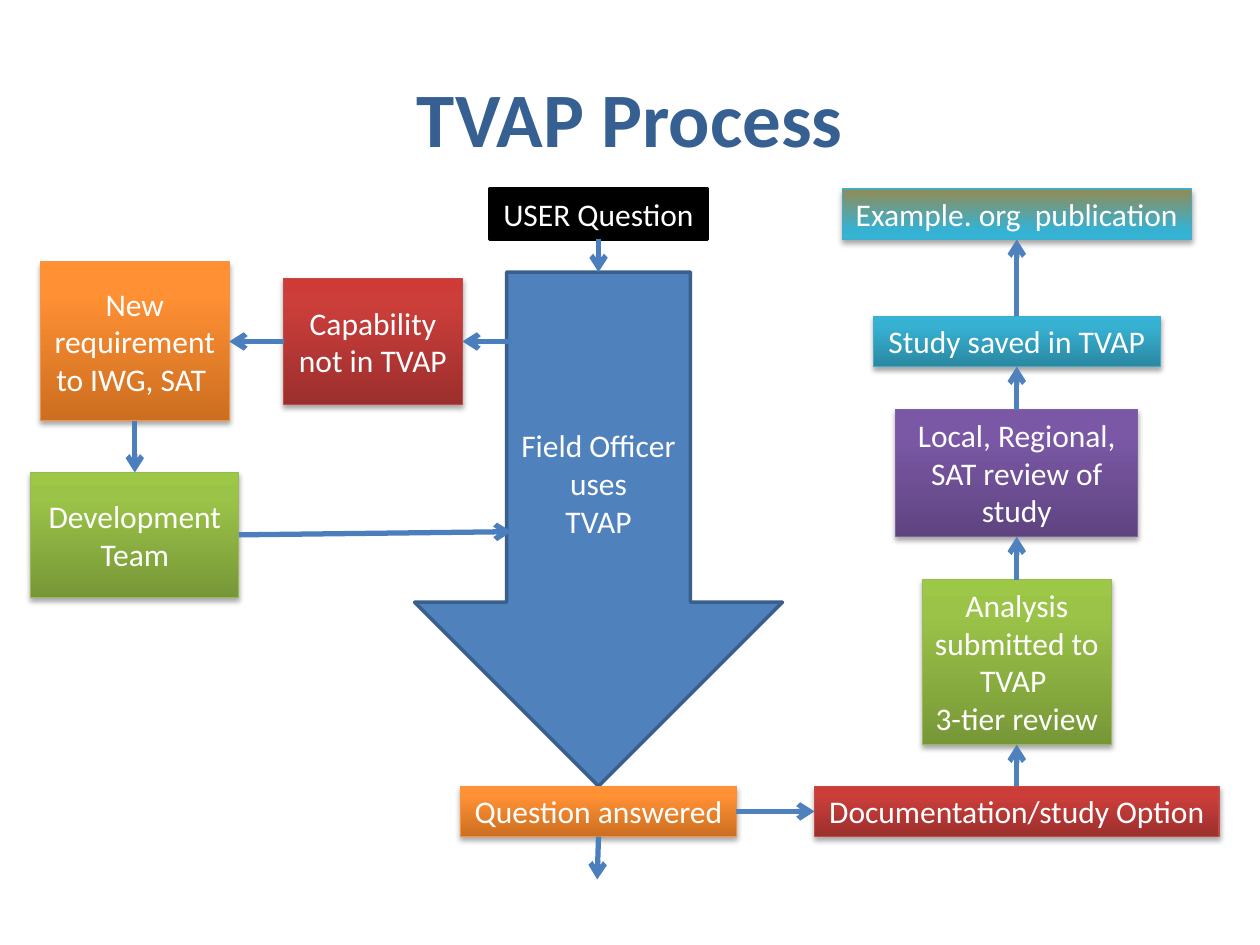
"""Build the TVAP process flow chart slide."""
from lxml.etree import SubElement
from pptx import Presentation
from pptx.dml.color import RGBColor as Color
from pptx.enum.shapes import MSO_CONNECTOR as Connector, MSO_SHAPE as Shape
from pptx.enum.text import MSO_ANCHOR as Anchor, MSO_AUTO_SIZE as AutoSize, PP_ALIGN as Align
from pptx.oxml.ns import qn
from pptx.util import Inches, Pt

COLORS = {"title": "376092", "text": "FFFFFF", "black": "000000", "blue": "4F81BD",
          "blue_edge": "3A5F8C", "main_link": "4B7EBC", "study_link": "4F81BD"}
UP, DOWN = 90, 270
GRADIENTS = {
    "orange": ("F69240", UP, [(0, "CC6E20"), (80, "FF9034"), (100, "FF9136")]),
    "red": ("BF4C48", UP, [(0, "9C2F2D"), (80, "CB3E3A"), (100, "CE3B37")]),
    "green": ("98B955", UP, [(0, "779737"), (80, "9BC348"), (100, "9DC746")]),
    "purple": ("7D60A0", UP, [(0, "5F4480"), (80, "7B58A6"), (100, "7C57A8")]),
    "teal": ("46AAC5", UP, [(0, "2A88A2"), (80, "37B1D2"), (100, "34B4D6")]),
    "sand": ("46AAC5", DOWN, [(0, "948A54"), (40, "659E93"), (80, "37B1D2"), (100, "34B4D6")]),
}
COLUMNS = {"team": 1.07, "gap": 2.96, "officer": 4.75, "study": 8.07}
ROW = 0.4
TOP, LEFT, BOTTOM, RIGHT = range(4)

# name: (text, column, top, width, height, style, wraps, grows)
BOXES = {
    "officer": ("Field Officer uses\nTVAP", "officer", 2.16, 2.92, 4.08, "blue", True, False),
    "question": ("USER Question", "officer", 1.5, 1.73, ROW, "black", False, True),
    "answer": ("Question answered", "officer", 6.24, 2.19, ROW, "orange", False, True),
    "option": ("Documentation/study Option", "study", 6.24, 3.21, ROW, "red", True, True),
    "analysis": ("Analysis submitted to TVAP \n3-tier review ", "study", 4.6, 1.5, 1.31,
                 "green", True, True),
    "review": ("Local, Regional, SAT review of study", "study", 3.25, 1.92, 1.01,
               "purple", True, True),
    "saved": ("Study saved in TVAP", "study", 2.51, 2.28, ROW, "teal", False, True),
    "publication": ("Example. org  publication", "study", 1.5, 2.77, ROW, "sand", False, True),
    "missing": ("Capability not in TVAP", "gap", 2.21, 1.42, 1, "red", True, False),
    "requirement": ("New requirement to IWG, SAT ", "team", 2.08, 1.5, 1.26,
                    "orange", True, False),
    "team": ("Development Team", "team", 3.75, 1.65, 0.99, "green", True, False),
}
LINKS = [
    ("main_link", ("question", BOTTOM), ("officer", TOP)),
    ("main_link", (4.06, 2.71), ("missing", RIGHT)),
    ("main_link", ("missing", LEFT), ("requirement", RIGHT)),
    ("main_link", ("requirement", BOTTOM), ("team", TOP)),
    ("main_link", ("team", RIGHT), (4.06, 4.22)),
    ("main_link", ("answer", BOTTOM), (4.74, 6.98)),
    ("study_link", ("answer", RIGHT), ("option", LEFT)),
    ("study_link", ("option", TOP), ("analysis", BOTTOM)),
    ("study_link", ("analysis", TOP), ("review", BOTTOM)),
    ("study_link", ("review", TOP), ("saved", BOTTOM)),
    ("study_link", ("saved", TOP), ("publication", BOTTOM)),
]


def apply(target, formats):
    for name, value in formats.items():
        setattr(target, name, value)


def write(frame, text, size, color, align, bold=False):
    frame.text = text
    for para in frame.paragraphs:
        para.alignment = align
        for span in para.runs:
            apply(span.font, {"name": "Calibri", "size": Pt(size), "bold": bold})
            span.font.color.rgb = Color.from_string(COLORS[color])


def outline(line, color, width):
    line.color.rgb = Color.from_string(color)
    line.width = Pt(width)


def paint_gradient(box, edge, angle, stops):
    box.fill.gradient()
    box.fill.gradient_angle = angle
    stop_list = box._element.spPr.find(".//" + qn("a:gsLst"))
    stop_list.clear()
    for share, color in stops:
        stop = SubElement(stop_list, qn("a:gs"), pos=str(share * 1000))
        SubElement(stop, qn("a:srgbClr"), val=color)
    outline(box.line, edge, 0.75)
    effects = box._element.spPr.find(qn("a:effectLst"))
    shadow = SubElement(effects, qn("a:outerShdw"), blurRad=str(Pt(3.1)), dist=str(Pt(1.8)),
                        dir="5400000", rotWithShape="0")
    tint = SubElement(shadow, qn("a:srgbClr"), val=COLORS["black"])
    SubElement(tint, qn("a:alpha"), val="35000")


def add_box(page, name):
    text, column, top, width, height, style, wraps, grows = BOXES[name]
    kind = Shape.DOWN_ARROW if name == "officer" else Shape.RECTANGLE
    left = COLUMNS[column] - width / 2
    box = page.shapes.add_shape(kind, *map(Inches, (left, top, width, height)))
    box.shadow.inherit = False
    if style in GRADIENTS:
        paint_gradient(box, *GRADIENTS[style])
    else:
        box.fill.solid()
        box.fill.fore_color.rgb = Color.from_string(COLORS[style])
        outline(box.line, COLORS["blue_edge" if style == "blue" else style], 2)
    apply(box.text_frame, {
        "word_wrap": wraps,
        "auto_size": AutoSize.SHAPE_TO_FIT_TEXT if grows else AutoSize.NONE,
        "vertical_anchor": Anchor.TOP if grows else Anchor.MIDDLE})
    write(box.text_frame, text, 18, "text", Align.CENTER)
    return box


def add_link(page, boxes, color, start, end):
    points = [(0, 0) if point[0] in boxes else point for point in (start, end)]
    link = page.shapes.add_connector(
        Connector.STRAIGHT, *(Inches(value) for point in points for value in point))
    for point, connect in ((start, link.begin_connect), (end, link.end_connect)):
        if point[0] in boxes:
            connect(boxes[point[0]], point[1])
    outline(link.line, COLORS[color], 3)
    SubElement(link.line._get_or_add_ln(), qn("a:tailEnd"), type="arrow")
    SubElement(link._element.spPr, qn("a:effectLst"))


def main():
    deck = Presentation()
    apply(deck, {"slide_width": Inches(10), "slide_height": Inches(7.5)})
    page = deck.slides.add_slide(deck.slide_layouts[5])
    title = page.shapes.title
    apply(title, {"left": Inches(0.5), "top": Inches(0.3),
                  "width": Inches(9), "height": Inches(1.25)})
    title.text_frame.vertical_anchor = Anchor.MIDDLE
    write(title.text_frame, "TVAP Process", 44, "title", Align.CENTER, bold=True)
    boxes = {name: add_box(page, name) for name in BOXES}
    for link in LINKS:
        add_link(page, boxes, *link)
    deck.save("out.pptx")


if __name__ == "__main__":
    main()
